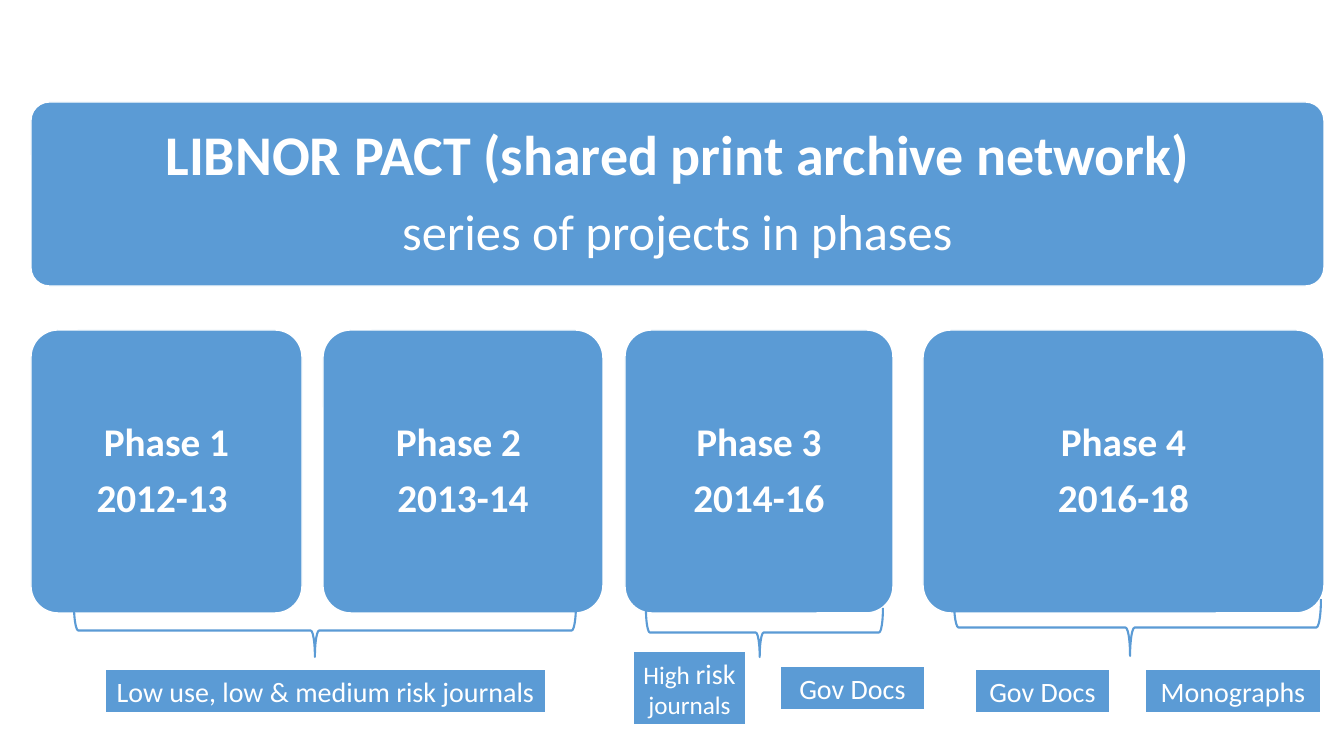
from pptx import Presentation
from pptx.dml.color import RGBColor
from pptx.enum.shapes import MSO_SHAPE as Shape
from pptx.enum.text import MSO_ANCHOR as Anchor, MSO_AUTO_SIZE as AutoSize, PP_ALIGN as Align
from pptx.util import Emu, Pt

BLUE, WHITE, FONT = "5B9BD5", "FFFFFF", "Calibri"
SLIDE = (1344, 756)
BANNER = (31, 102, 1293, 184)
TITLE_LINES = [
    ("LIBNOR PACT (shared print archive network)", 40, True),
    ("series of projects in phases", 36, False),
]
PHASE_TOP, PHASE_HEIGHT, PHASE_SIZE = 330, 283, 28
PHASES = [
    (31, 271, ["Phase 1", "2012-13 "]),
    (323, 280, ["Phase 2 ", "2013-14"]),
    (625, 268, ["Phase 3", "2014-16"]),
    (923, 401, ["Phase 4", "2016-18"]),
]
BRACES = [(74, 604, 502, 53), (646, 608, 237, 49), (954, 599, 367, 57)]
LABELS = [
    ((105, 669, 441, 44), [("Low use, low & medium risk journals", 20)]),
    ((633, 651, 113, 74), [("High ", 18), ("risk", 20), (" journals", 18)]),
    ((780, 666, 145, 44), [("Gov Docs", 20)]),
    ((975, 669, 135, 44), [("Gov Docs", 20)]),
    ((1145, 669, 176, 44), [("Monographs", 20)]),
]


def px(length):
    """Turn pixels into EMU."""
    return Emu(round(length * 914400 / 100.8))


def color(value):
    """Turn a hex string into a colour."""
    return RGBColor.from_string(value)


def add_box(page, kind, frame, line, width, fill=None):
    """Add a flat shape with an outline and an optional fill."""
    box = page.shapes.add_shape(kind, *map(px, frame))
    box.shadow.inherit = False
    box.line.color.rgb = color(line)
    box.line.width = Pt(width)
    if fill:
        box.fill.solid()
        box.fill.fore_color.rgb = color(fill)
    else:
        box.fill.background()
    return box


def prepare_frame(shape, side, edge):
    """Centre the text of a shape vertically and set its margins."""
    frame = shape.text_frame
    frame.word_wrap = True
    frame.auto_size = AutoSize.NONE
    frame.vertical_anchor = Anchor.MIDDLE
    frame.margin_left = frame.margin_right = px(side)
    frame.margin_top = frame.margin_bottom = px(edge)
    return frame


def style_paragraph(para, size, bold=False):
    """Give a paragraph its alignment and font."""
    para.alignment = Align.CENTER
    para.font.name = FONT
    para.font.size = Pt(size)
    para.font.bold = bold
    para.font.color.rgb = color(WHITE)


def write_lines(shape, lines, inset):
    """Write one spaced paragraph for each line of text."""
    frame = prepare_frame(shape, inset, inset)
    frame.text = "\n".join(text for text, _, _ in lines)
    for para, (_, size, bold) in zip(frame.paragraphs, lines):
        style_paragraph(para, size, bold)
        para.line_spacing = 0.9
        para.space_before = Pt(0)
        para.space_after = Pt(size * 0.35)


def add_banner(page):
    """Draw the banner and lay the title over it."""
    banner = add_box(page, Shape.ROUNDED_RECTANGLE, BANNER, WHITE, 1, BLUE)
    banner.adjustments[0] = 0.1
    title = page.shapes.title
    title.left, title.top, title.width, title.height = map(px, BANNER)
    write_lines(title, TITLE_LINES, 22)
    banner._element.addnext(title._element)


def add_phase(page, left, width, lines):
    """Draw the rounded box of a phase."""
    frame = (left, PHASE_TOP, width, PHASE_HEIGHT)
    box = add_box(page, Shape.ROUNDED_RECTANGLE, frame, WHITE, 1, BLUE)
    box.adjustments[0] = 0.1
    write_lines(box, [(text, PHASE_SIZE, True) for text in lines], 20)


def add_brace(page, left, top, width, height):
    """Draw a brace that points down and fills the given area."""
    shift = (width - height) / 2
    frame = (left + shift, top - shift, height, width)
    brace = add_box(page, Shape.LEFT_BRACE, frame, BLUE, 1.5)
    brace.rotation = 270
    brace.adjustments[0] = 0.08
    brace.adjustments[1] = 0.48


def add_label(page, frame, spans):
    """Draw a label whose spans may differ in size."""
    box = add_box(page, Shape.RECTANGLE, frame, WHITE, 1.5, BLUE)
    para = prepare_frame(box, 10, 5).paragraphs[0]
    style_paragraph(para, spans[0][1])
    for text, size in spans:
        span = para.add_run()
        span.text = text
        span.font.size = Pt(size)


def main():
    """Build the slide and save it."""
    deck = Presentation()
    deck.slide_width, deck.slide_height = map(px, SLIDE)
    page = deck.slides.add_slide(deck.slide_layouts[5])
    add_banner(page)
    for phase in PHASES:
        add_phase(page, *phase)
    for brace in BRACES:
        add_brace(page, *brace)
    for label in LABELS:
        add_label(page, *label)
    deck.save("out.pptx")


if __name__ == "__main__":
    main()
